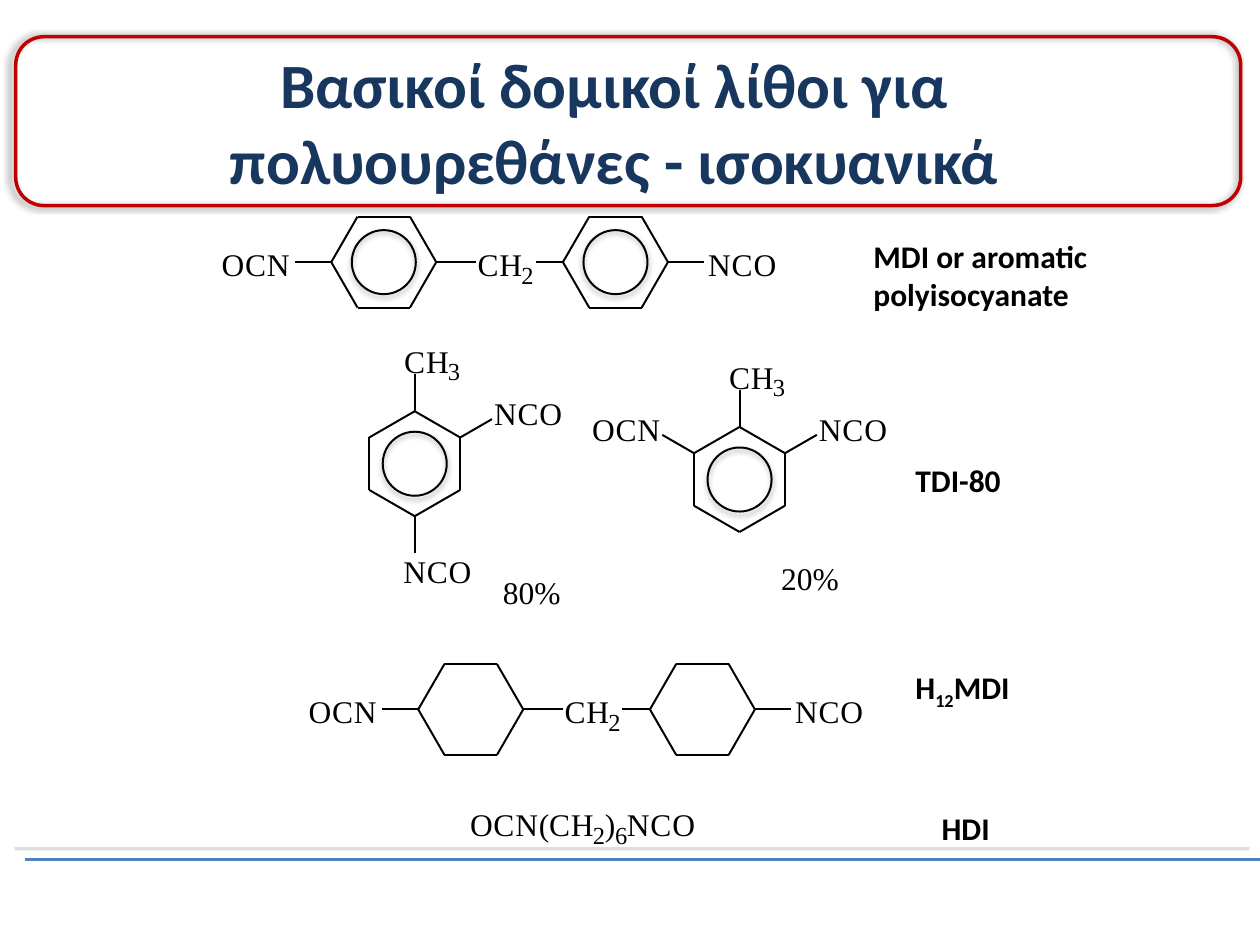
import math

from lxml import etree
from pptx import Presentation
from pptx import util as u
from pptx.dml.color import RGBColor
from pptx.enum import shapes, text
from pptx.oxml import ns

BLACK = RGBColor(0x00, 0x00, 0x00)
NAVY = RGBColor(0x17, 0x37, 0x5E)
RED = RGBColor(0xC0, 0x00, 0x00)
BLUE = RGBColor(0x4F, 0x81, 0xBD)
GREY = RGBColor(0xBF, 0xBF, 0xBF)

TITLE = dict(name="Calibri", size=u.Pt(36), bold=True)
LABEL = dict(name="Calibri", size=u.Pt(18), bold=True)
ATOM = dict(name="Times New Roman", size=u.Pt(18))
SUBSCRIPT = dict(name="Times New Roman", size=u.Pt(14))
NO_MARGIN = dict(margin_left=0, margin_top=0, margin_right=0, margin_bottom=0)

ADVANCE = {"O": 13.4, "N": 13.4, "C": 12.5, "H": 12.5, "(": 5.9, ")": 5.9, "%": 15}
DIGIT, SUB_DIGIT, SUB_DROP = 9, 6.8, 8.3
RING, CIRCLE, BOND = 30, 18.3, 21


def apply(target, values):
    for key, value in values.items():
        setattr(target, key, value)


def style(font, values, color=BLACK):
    apply(font, values)
    font.color.rgb = color


def set_effect(shape, color=None, alpha=0, blur=0, distance=0, angle=0):
    properties = shape._element.spPr
    effects = etree.SubElement(properties, ns.qn("a:effectLst"))
    if color is None:
        return
    shadow = etree.SubElement(
        effects, ns.qn("a:outerShdw"), blurRad=str(u.Pt(blur)),
        dist=str(u.Pt(distance)), dir=str(angle * 60000), rotWithShape="0")
    tint = etree.SubElement(shadow, ns.qn("a:srgbClr"), val=str(color))
    etree.SubElement(tint, ns.qn("a:alpha"), val=str(alpha * 1000))


def add_line(page, start, end, color=BLACK, width=1.13, **shadow):
    line = page.shapes.add_connector(
        shapes.MSO_CONNECTOR.STRAIGHT, *(u.Pt(value) for value in (*start, *end)))
    line.line.color.rgb = color
    line.line.width = u.Pt(width)
    set_effect(line, **shadow)


def add_outline(page, kind, box, color, width):
    shape = page.shapes.add_shape(kind, *(u.Pt(value) for value in box))
    shape.fill.background()
    shape.line.color.rgb = color
    shape.line.width = u.Pt(width)
    return shape


def add_formula(page, left, top, formula):
    previous = ""
    for symbol in formula:
        lowered = symbol.isdigit() and (previous.isalpha() or previous == ")")
        advance = SUB_DIGIT if lowered else ADVANCE.get(symbol, DIGIT)
        box = page.shapes.add_textbox(
            u.Pt(left), u.Pt(top + (SUB_DROP if lowered else 0)),
            u.Pt(advance + 7), u.Pt(19.4 if lowered else 24.5))
        frame = box.text_frame
        apply(frame, dict(NO_MARGIN, word_wrap=False,
                          auto_size=text.MSO_AUTO_SIZE.SHAPE_TO_FIT_TEXT))
        span = frame.paragraphs[0].add_run()
        span.text = symbol
        style(span.font, SUBSCRIPT if lowered else ATOM)
        left += advance
        previous = symbol


def polar(center, radius, degrees):
    angle = math.radians(degrees)
    return center[0] + radius * math.cos(angle), center[1] + radius * math.sin(angle)


def add_ring(page, center, first_angle, aromatic=True):
    corners = [polar(center, RING, first_angle + 60 * step) for step in range(6)]
    for start, end in zip(corners, corners[1:] + corners[:1]):
        add_line(page, start, end)
    if aromatic:
        box = (center[0] - CIRCLE, center[1] - CIRCLE, 2 * CIRCLE, 2 * CIRCLE)
        add_outline(page, shapes.MSO_SHAPE.OVAL, box, BLACK, 1.13)


def add_bridged_rings(page, box, aromatic):
    left, top, width, height = box
    middle = top + height / 2
    for offset, formula in ((0, "OCN"), (146.2, "CH2"), (278, "NCO")):
        add_formula(page, left + offset, top + 16.3, formula)
    for offset in (92.6, 225):
        add_ring(page, (left + offset, middle), 0, aromatic)
    for start, end in ((41.8, 62.6), (122.6, 145.4), (179.3, 195), (255, 275.8)):
        add_line(page, (left + start, middle), (left + end, middle))


def add_toluene_ring(page, box, groups, share, share_offset):
    left, top, width, height = box
    center = left + width / 2, top + height / 2
    add_ring(page, center, 90)
    for angle, formula, across, down in groups:
        add_line(page, polar(center, RING, angle), polar(center, RING + BOND, angle))
        add_formula(page, center[0] + across, center[1] + down, formula)
    add_formula(page, center[0] + share_offset[0], center[1] + share_offset[1], share)


def add_label(page, box, parts):
    frame = page.shapes.add_textbox(*(u.Pt(value) for value in box)).text_frame
    apply(frame, dict(word_wrap=True, auto_size=text.MSO_AUTO_SIZE.SHAPE_TO_FIT_TEXT))
    for content, baseline in parts:
        span = frame.paragraphs[0].add_run()
        span.text = content
        style(span.font, LABEL)
        if baseline:
            span.font._element.set("baseline", str(baseline * 1000))


def add_title(page, box):
    left, top, width, height = box
    title = page.shapes.title
    apply(title, dict(left=u.Pt(left + 45), top=u.Pt(top - 3),
                      width=u.Pt(594), height=u.Pt(height + 6)))
    frame = title.text_frame
    apply(frame, dict(word_wrap=True, vertical_anchor=text.MSO_ANCHOR.MIDDLE,
                      auto_size=text.MSO_AUTO_SIZE.NONE))
    para = frame.paragraphs[0]
    para.alignment = text.PP_ALIGN.CENTER
    span = para.add_run()
    span.text = "Βασικοί δομικοί λίθοι για πολυουρεθάνες - ισοκυανικά"
    style(span.font, TITLE, NAVY)
    border = add_outline(page, shapes.MSO_SHAPE.ROUNDED_RECTANGLE, box, RED, 2)
    set_effect(border, BLACK, alpha=40, blur=4, distance=3, angle=180)


def main():
    deck = Presentation()
    apply(deck, dict(slide_width=u.Pt(720), slide_height=u.Pt(540)))
    page = deck.slides.add_slide(deck.slide_layouts[5])

    set_rule = dict(alpha=50, distance=8.5, angle=225)
    start, end = (14.4, 491), (720, 491)
    line_color = BLUE
    page_rule = page.shapes.add_connector(
        shapes.MSO_CONNECTOR.STRAIGHT, *(u.Pt(value) for value in (*start, *end)))
    page_rule.line.color.rgb = line_color
    page_rule.line.width = u.Pt(1.75)
    set_effect(page_rule, GREY, **set_rule)

    add_bridged_rings(page, (126.7, 123.8, 319, 52), True)
    methyl = (-90, "CH3", -6, -69.6)
    right_group = (-30, "NCO", 45.4, -39.8)
    add_toluene_ring(page, (187, 195, 100, 140),
                     (methyl, right_group, (90, "NCO", -6.5, 50.4)), "80%", (50.4, 62.6))
    add_toluene_ring(page, (372.6, 204, 100, 140),
                     (methyl, right_group, (-150, "OCN", -84.2, -39.8)), "20%", (23.8, 45.7))
    add_bridged_rings(page, (176.4, 379.4, 319, 52), False)
    add_formula(page, 268.6, 460, "OCN(CH2)6NCO")

    labels = (
        ((516, 260, 120, 29), [("TDI-80", 0)]),
        ((492, 132, 192, 50), [("MDI or aromatic polyisocyanate", 0)]),
        ((516, 378, 156, 29), [("H", 0), ("12", -25), ("MDI", 0)]),
        ((531, 458.6, 114, 29), [("HDI", 0)]),
    )
    for box, parts in labels:
        add_label(page, box, parts)
    add_title(page, (9, 21, 700, 96.5))
    deck.save("out.pptx")


if __name__ == "__main__":
    main()
